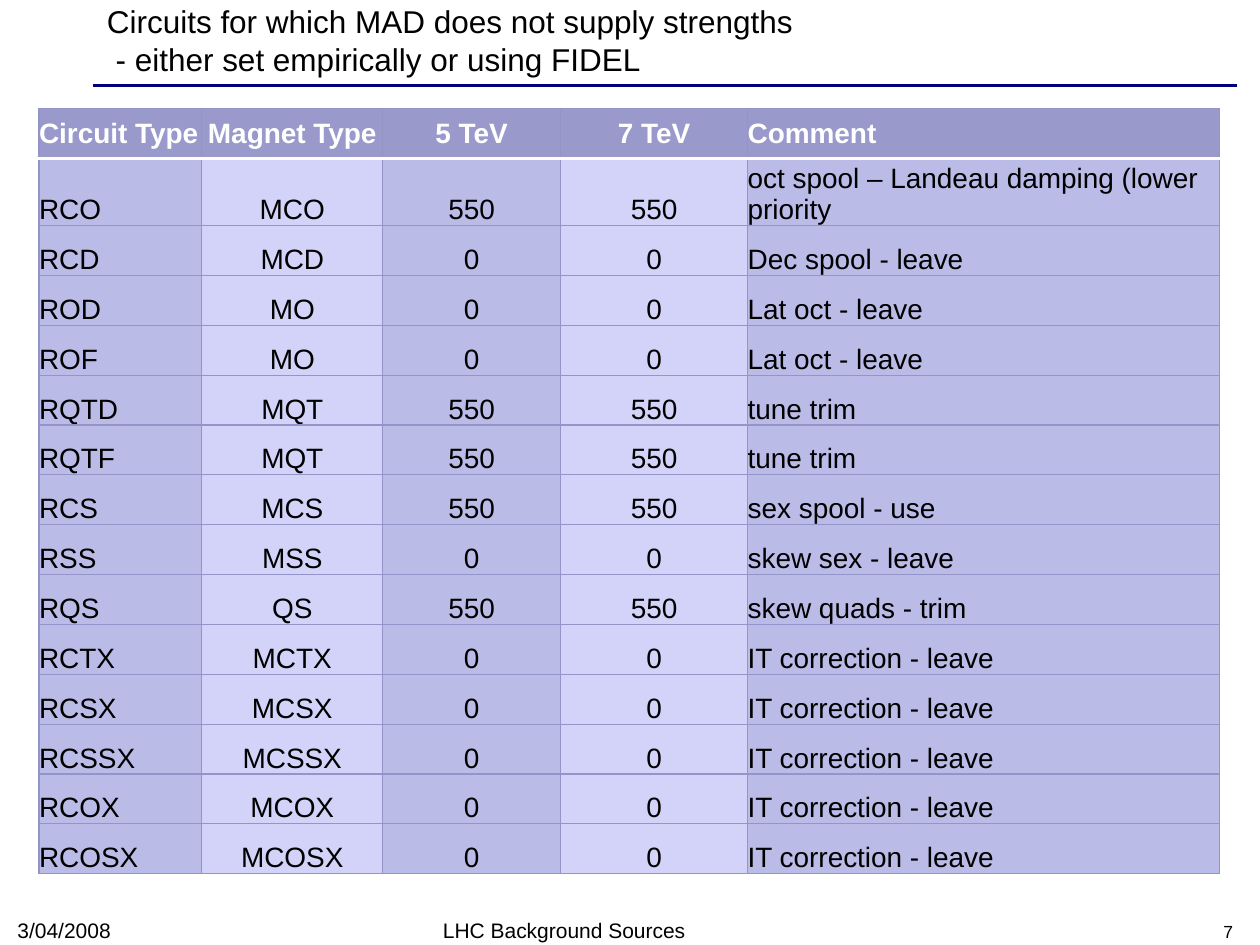
from lxml.etree import SubElement
from pptx import Presentation
from pptx.dml.color import RGBColor
from pptx.enum.shapes import MSO_CONNECTOR
from pptx.enum.text import MSO_ANCHOR, PP_ALIGN
from pptx.oxml.ns import qn
from pptx.util import Pt

BLACK, WHITE, NAVY = "000000", "FFFFFF", "00007D"
HEADER, DARK_BAND, LIGHT_BAND, GRID = "9999CC", "BBBBE8", "D3D3F9", "9494C9"

COLUMN_WIDTHS = [93, 103.5, 101.5, 107, 269.7]
HEADINGS = ["Circuit Type", "Magnet Type", "5 TeV", "7 TeV", "Comment"]
CIRCUITS = [
    ("RCO", "MCO", "550", "oct spool – Landeau damping (lower priority"),
    ("RCD", "MCD", "0", "Dec spool - leave"),
    ("ROD", "MO", "0", "Lat oct - leave"),
    ("ROF", "MO", "0", "Lat oct - leave"),
    ("RQTD", "MQT", "550", "tune trim"),
    ("RQTF", "MQT", "550", "tune trim"),
    ("RCS", "MCS", "550", "sex spool - use"),
    ("RSS", "MSS", "0", "skew sex - leave"),
    ("RQS", "QS", "550", "skew quads - trim"),
    ("RCTX", "MCTX", "0", "IT correction - leave"),
    ("RCSX", "MCSX", "0", "IT correction - leave"),
    ("RCSSX", "MCSSX", "0", "IT correction - leave"),
    ("RCOX", "MCOX", "0", "IT correction - leave"),
    ("RCOSX", "MCOSX", "0", "IT correction - leave"),
]


def color(value):
    return RGBColor.from_string(value)


class SlideBuilder:
    font_name = "Arial"
    row_height = 28.5
    tall_row_height = 35.4

    def __init__(self, page):
        self.page = page

    def style(self, para, size, fill=BLACK, align=PP_ALIGN.LEFT, bold=False):
        para.alignment = align
        para.font.name = self.font_name
        para.font.size = Pt(size)
        para.font.bold = bold
        para.font.color.rgb = color(fill)

    def text(self, words, left, top, width, height, size,
             anchor=MSO_ANCHOR.BOTTOM, align=PP_ALIGN.LEFT):
        box = self.page.shapes.add_textbox(Pt(left), Pt(top), Pt(width), Pt(height))
        frame = box.text_frame
        frame.word_wrap = True
        frame.vertical_anchor = anchor
        para = frame.paragraphs[0]
        para.text = words
        self.style(para, size, align=align)

    def rule(self, left, right, y):
        line = self.page.shapes.add_connector(
            MSO_CONNECTOR.STRAIGHT, Pt(left), Pt(y), Pt(right), Pt(y))
        line.line.color.rgb = color(NAVY)
        line.line.width = Pt(2)
        SubElement(line._element.spPr, qn("a:effectLst"))

    def border(self, cell, side, value, width):
        edge = SubElement(cell._tc.get_or_add_tcPr(), qn(f"a:ln{side}"), w=str(Pt(width)))
        solid = SubElement(edge, qn("a:solidFill"))
        SubElement(solid, qn("a:srgbClr"), val=value)

    def cell(self, cell, words, row, column):
        heading = row == 0
        cell.margin_left = cell.margin_right = cell.margin_top = cell.margin_bottom = 0
        cell.vertical_anchor = MSO_ANCHOR.MIDDLE if heading else MSO_ANCHOR.BOTTOM
        thick_side = {0: "B", 1: "T"}.get(row)
        for side in "LRTB":
            value, width = (WHITE, 2) if side == thick_side else (GRID, 0.75)
            self.border(cell, side, value, width)
        band = LIGHT_BAND if column % 2 else DARK_BAND
        cell.fill.solid()
        cell.fill.fore_color.rgb = color(HEADER if heading else band)
        para = cell.text_frame.paragraphs[0]
        para.text = words
        align = PP_ALIGN.CENTER if column in (1, 2, 3) else PP_ALIGN.LEFT
        self.style(para, 16, WHITE if heading else BLACK, align, heading)

    def table(self, rows, widths, left, top):
        height = self.row_height * (len(rows) - 1) + self.tall_row_height
        table = self.page.shapes.add_table(
            len(rows), len(widths), Pt(left), Pt(top), Pt(sum(widths)), Pt(height)).table
        table.horz_banding = False
        for column, width in zip(table.columns, widths):
            column.width = Pt(width)
        for row, values in enumerate(rows):
            table.rows[row].height = Pt(self.tall_row_height if row == 1 else self.row_height)
            for column, words in enumerate(values):
                self.cell(table.cell(row, column), words, row, column)


def main():
    deck = Presentation()
    deck.slide_width, deck.slide_height = Pt(720), Pt(540)
    builder = SlideBuilder(deck.slides.add_slide(deck.slide_layouts[6]))
    builder.rule(53, 707, 49)
    builder.text("Circuits for which MAD does not supply strengths\v"
                 " - either set empirically or using FIDEL",
                 54, 2.2, 648, 41, 18, MSO_ANCHOR.MIDDLE)
    builder.text("LHC Background Sources", 246, 522, 228, 20, 12)
    builder.text("7", 543.6, 522, 168, 20, 10, align=PP_ALIGN.RIGHT)
    builder.text("3/04/2008", 2.9, 521.5, 168, 20.5, 12)
    rows = [HEADINGS] + [(circuit, magnet, current, current, comment)
                         for circuit, magnet, current, comment in CIRCUITS]
    builder.table(rows, COLUMN_WIDTHS, 22.3, 62)
    deck.save("out.pptx")


if __name__ == "__main__":
    main()
